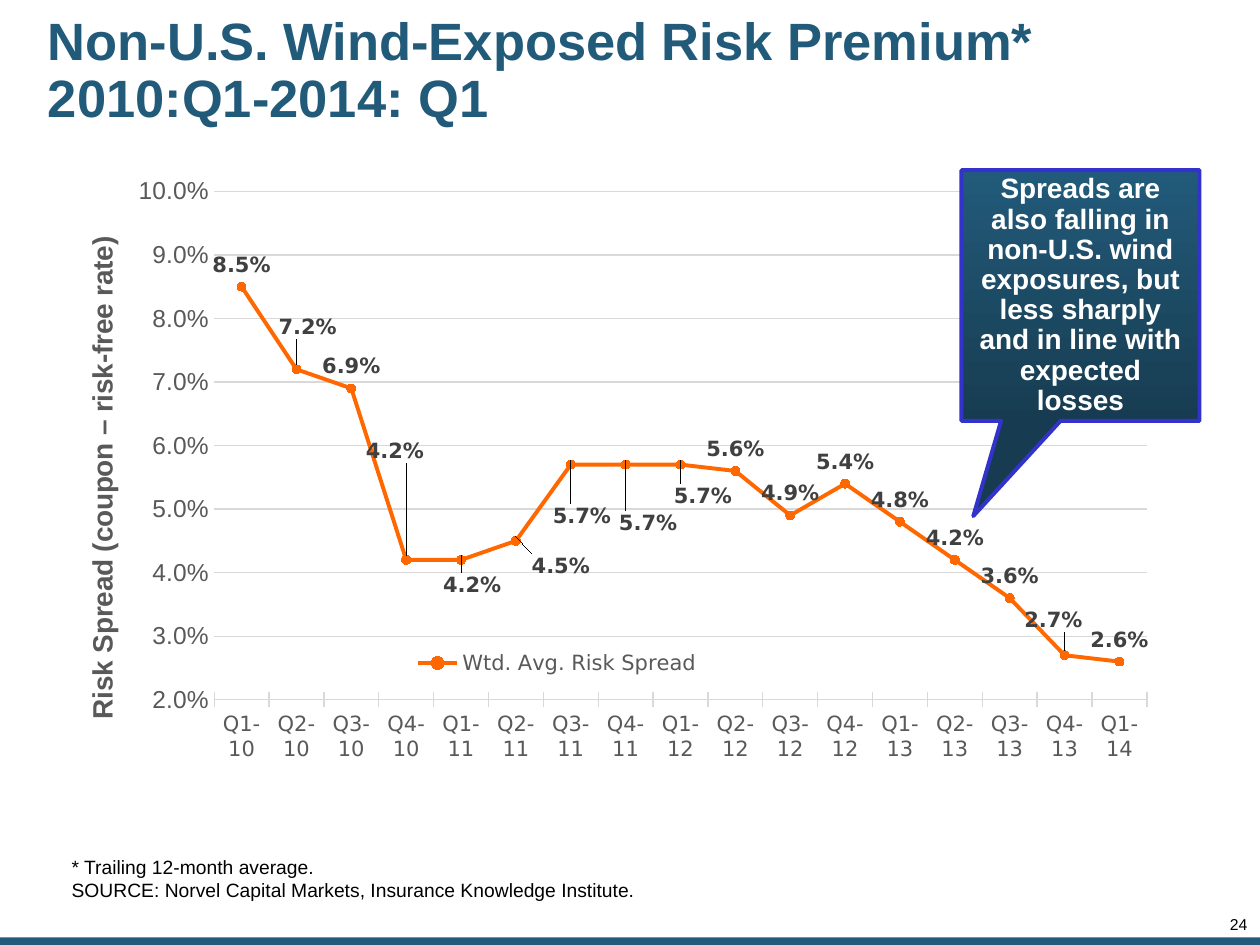
from dataclasses import dataclass
from typing import NamedTuple

from lxml.etree import SubElement
from pptx import Presentation
from pptx.chart.data import CategoryChartData as Data
from pptx.dml.color import RGBColor as Rgb
from pptx.enum.chart import (XL_CHART_TYPE as Kind, XL_LABEL_POSITION as Spot,
                             XL_LEGEND_POSITION as Side, XL_MARKER_STYLE as Dot,
                             XL_TICK_MARK as Tick)
from pptx.enum.shapes import MSO_SHAPE as Shape
from pptx.enum.text import MSO_ANCHOR as Anchor, MSO_AUTO_SIZE as Fit, PP_ALIGN as Align
from pptx.oxml.ns import qn
from pptx.util import Inches, Pt


@dataclass(frozen=True)
class Theme:
    blue: str = "225A7A"
    navy: str = "173C51"
    edge: str = "3333CC"
    line: str = "FF6801"
    grid: str = "D9D9D9"
    gray: str = "595959"
    dark: str = "404040"
    black: str = "000000"
    white: str = "FFFFFF"
    sans: str = "Arial"
    plain: str = "DejaVu Sans"
    head: int = 30
    call: int = 16
    axis: int = 14
    label: int = 12
    note: int = 11
    page: int = 9


class Box(NamedTuple):
    left: float
    top: float
    width: float
    height: float

    def emu(self) -> list:
        return [Inches(n) for n in self]


class Shift(NamedTuple):
    """Offset of one data label, as a share of the chart size."""
    point: int
    x: float
    y: float


THEME = Theme()
SPREADS = [8.5, 7.2, 6.9, 4.2, 4.2, 4.5, 5.7, 5.7, 5.7,
           5.6, 4.9, 5.4, 4.8, 4.2, 3.6, 2.7, 2.6]
QUARTERS = [f"Q{i % 4 + 1}-{10 + i // 4}" for i in range(len(SPREADS))]
SHIFTS = [Shift(1, 0.01, -0.03), Shift(3, -0.01, -0.13), Shift(4, 0.01, 0.07),
          Shift(5, 0.04, 0.07), Shift(6, 0.01, 0.11), Shift(7, 0.02, 0.12),
          Shift(8, 0.02, 0.08), Shift(15, -0.01, -0.02)]


def style(font, size: int, color: str, face: str, bold: bool = False) -> None:
    font.size, font.name, font.bold = Pt(size), face, bold
    font.color.rgb = Rgb.from_string(color)


def write(frame, text: str, *, size: int, color: str, bold: bool = False,
          align=Align.LEFT, anchor=Anchor.TOP, inset=(0.1, 0.05),
          space: float = 1.0) -> None:
    frame.text = text
    frame.word_wrap = True
    frame.auto_size = Fit.NONE
    frame.vertical_anchor = anchor
    frame.margin_left = frame.margin_right = Inches(inset[0])
    frame.margin_top = frame.margin_bottom = Inches(inset[1])
    for para in frame.paragraphs:
        para.alignment, para.line_spacing = align, space
        para.space_before = Pt(0)
        for run in para.runs:
            style(run.font, size, color, THEME.sans, bold)


def stroke(line, color: str, width: float) -> None:
    line.color.rgb = Rgb.from_string(color)
    line.width = Pt(width)


def paint(fill, color: str) -> None:
    fill.solid()
    fill.fore_color.rgb = Rgb.from_string(color)


def place(node, after: str = "", edge: bool = True, inner: bool = False,
          **size: float) -> None:
    """Give a chart part a manual layout, put after the named child."""
    for old in node.findall(qn("c:layout")):
        node.remove(old)
    layout = node.makeelement(qn("c:layout"))
    node.insert(node.index(node.find(qn(after))) + 1 if after else 0, layout)
    manual = SubElement(layout, qn("c:manualLayout"))
    if inner:
        SubElement(manual, qn("c:layoutTarget")).set("val", "inner")
    if edge:
        for mode in ("xMode", "yMode"):
            SubElement(manual, qn(f"c:{mode}")).set("val", "edge")
    for name, value in size.items():
        SubElement(manual, qn(f"c:{name}")).set("val", str(value))


def format_axes(chart) -> None:
    cat, val = chart.category_axis, chart.value_axis
    style(cat.tick_labels.font, THEME.label, THEME.gray, THEME.plain)
    cat.major_tick_mark = Tick.CROSS
    stroke(cat.format.line, THEME.grid, 0.75)

    style(val.tick_labels.font, THEME.axis, THEME.gray, THEME.sans)
    val.minimum_scale, val.maximum_scale, val.major_unit = 0.02, 0.1, 0.01
    val.major_tick_mark = Tick.NONE
    val.tick_labels.number_format = "0.0%"
    val.tick_labels.number_format_is_linked = False
    val.format.line.fill.background()
    stroke(val.major_gridlines.format.line, THEME.grid, 0.75)
    title = val.axis_title
    title.text_frame.text = "Risk Spread (coupon – risk-free rate)"
    run = title.text_frame.paragraphs[0].runs[0]
    style(run.font, THEME.call, THEME.gray, THEME.sans, True)
    place(title._element, "c:tx", x=0.01, y=0.09)


def format_line(series) -> None:
    series.smooth = False
    stroke(series.format.line, THEME.line, 2.25)
    series.marker.style, series.marker.size = Dot.CIRCLE, 5
    paint(series.marker.format.fill, THEME.line)
    stroke(series.marker.format.line, THEME.line, 0.75)

    labels = series.data_labels
    labels.show_value, labels.position = True, Spot.ABOVE
    labels.number_format, labels.number_format_is_linked = "0.0%", False
    style(labels.font, THEME.label, THEME.dark, THEME.plain, True)
    for shift in SHIFTS:
        label = series.points[shift.point].data_label
        label.position = Spot.ABOVE
        style(label.font, THEME.label, THEME.dark, THEME.plain, True)
    for node, shift in zip(labels._element.findall(qn("c:dLbl")), SHIFTS):
        place(node, "c:idx", edge=False, x=shift.x, y=shift.y)


def add_spreads(slide, box: Box) -> None:
    data = Data(number_format="0.0%")
    data.categories = QUARTERS
    data.add_series("Wtd. Avg. Risk Spread", [round(n / 100, 3) for n in SPREADS])
    chart = slide.shapes.add_chart(Kind.LINE_MARKERS, *box.emu(), data).chart
    chart.has_title = False
    style(chart.font, 10, THEME.black, THEME.plain)
    chart.plots[0].vary_by_categories = False
    format_axes(chart)
    format_line(chart.plots[0].series[0])

    chart.has_legend = True
    legend = chart.legend
    legend.position, legend.include_in_layout = Side.BOTTOM, False
    style(legend.font, THEME.label, THEME.gray, THEME.plain)
    place(legend._element, "c:legendPos", x=0.3, y=0.71, w=0.27, h=0.05)
    area = chart._chartSpace.chart.plotArea
    place(area, inner=True, x=0.13, y=0.03, w=0.83, h=0.76)


def add_shape(slide, kind, box: Box):
    shape = slide.shapes.add_shape(kind, *box.emu())
    shape.shadow.inherit = False
    return shape


def add_callout(slide, box: Box, text: str) -> None:
    call = add_shape(slide, Shape.RECTANGULAR_CALLOUT, box)
    call.adjustments[0], call.adjustments[1] = -0.45, 0.88
    call.fill.gradient()
    call.fill.gradient_angle = 270
    for stop, color, pos in zip(call.fill.gradient_stops,
                                (THEME.blue, THEME.navy), (0, 1)):
        stop.color.rgb, stop.position = Rgb.from_string(color), pos
    stroke(call.line, THEME.edge, 2.25)
    write(call.text_frame, text, size=THEME.call, color=THEME.white, bold=True,
          align=Align.CENTER, anchor=Anchor.MIDDLE, inset=(0.1, 0.1), space=0.9)


def add_note(slide, box: Box, text: str, **form) -> None:
    note = slide.shapes.add_textbox(*box.emu())
    write(note.text_frame, text, color=THEME.black, **form)


def main() -> None:
    deck = Presentation()
    deck.slide_width, deck.slide_height = Inches(10), Inches(7.5)
    slide = deck.slides.add_slide(deck.slide_layouts[5])

    bar = add_shape(slide, Shape.RECTANGLE, Box(0, 7.44, 10, 0.06))
    paint(bar.fill, THEME.blue)
    bar.line.fill.background()

    title = slide.shapes.title
    title.left, title.top, title.width, title.height = Box(0.33, 0.1, 8.09, 0.94).emu()
    write(title.text_frame, "Non-U.S. Wind-Exposed Risk Premium*\v2010:Q1-2014: Q1",
          size=THEME.head, color=THEME.blue, bold=True, anchor=Anchor.MIDDLE,
          inset=(0.05, 0.05), space=0.9)

    add_spreads(slide, Box(0.54, 1.36, 8.92, 5.31))
    add_note(slide, Box(9.41, 7.28, 0.49, 0.13), "24", size=THEME.page,
             align=Align.RIGHT, inset=(0, 0), space=0.85)
    add_note(slide, Box(0.47, 6.74, 9.04, 0.77),
             "* Trailing 12-month average.\n"
             "SOURCE: Norvel Capital Markets, Insurance Knowledge Institute.",
             size=THEME.note)
    add_callout(slide, Box(7.63, 1.35, 1.89, 1.99),
                "Spreads are also falling in non-U.S. wind exposures, but less "
                "sharply and in line with expected losses")
    deck.save("out.pptx")


if __name__ == "__main__":
    main()
